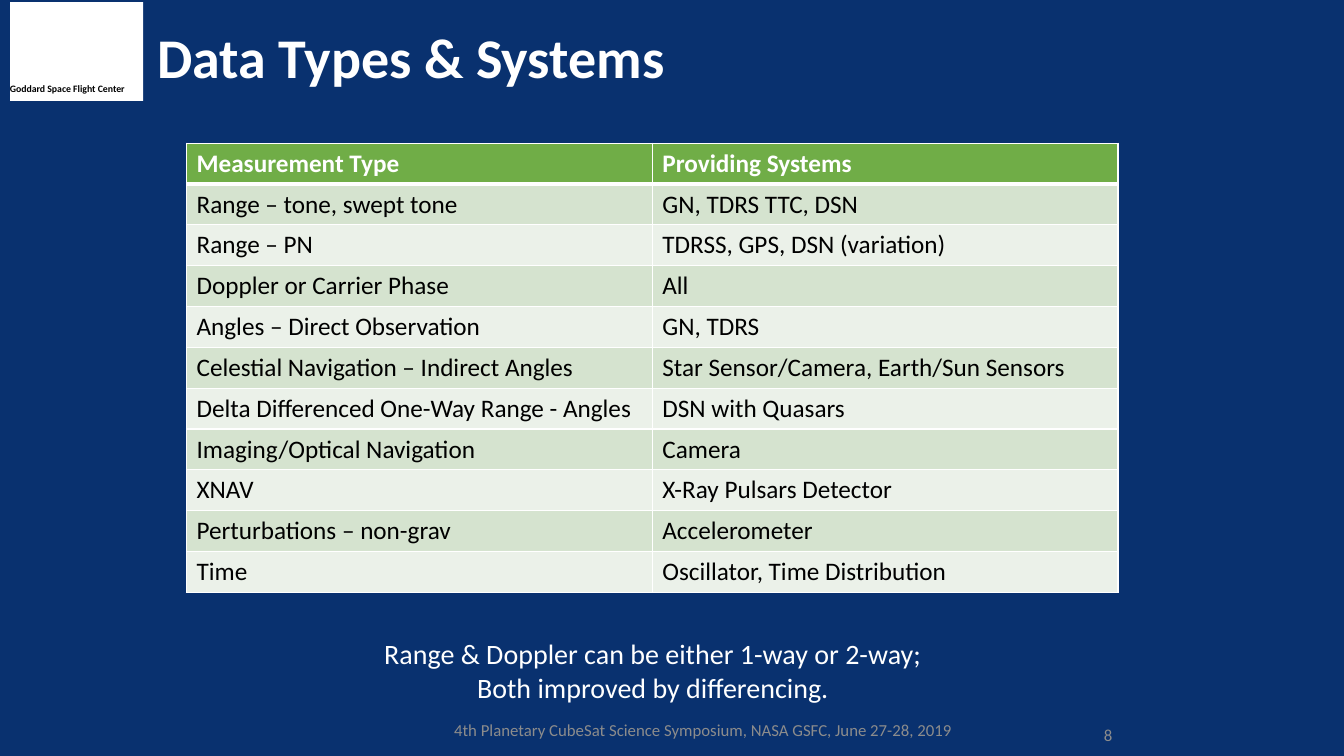
"""Build the Data Types & Systems slide."""
from lxml.etree import SubElement
from pptx import Presentation
from pptx.dml.color import RGBColor
from pptx.enum.shapes import MSO_SHAPE
from pptx.enum.text import MSO_ANCHOR, PP_ALIGN
from pptx.oxml.ns import qn
from pptx.util import Inches, Pt

NAVY = RGBColor(0x09, 0x31, 0x6F)
WHITE = RGBColor(0xFF, 0xFF, 0xFF)
BLACK = RGBColor(0x00, 0x00, 0x00)
GRAY = RGBColor(0x8C, 0x8C, 0x8C)
GREEN = RGBColor(0x70, 0xAD, 0x47)
BANDS = (RGBColor(0xEB, 0xF1, 0xE9), RGBColor(0xD5, 0xE3, 0xCF))
FONT = "Calibri"

CENTER = "Goddard Space Flight Center"
TITLE = "Data Types & Systems"
ROWS = [
    ("Measurement Type", "Providing Systems"),
    ("Range – tone, swept tone", "GN, TDRS TTC, DSN"),
    ("Range – PN", "TDRSS, GPS, DSN (variation)"),
    ("Doppler or Carrier Phase", "All"),
    ("Angles – Direct Observation", "GN, TDRS"),
    ("Celestial Navigation – Indirect Angles", "Star Sensor/Camera, Earth/Sun Sensors"),
    ("Delta Differenced One-Way Range - Angles", "DSN with Quasars"),
    ("Imaging/Optical Navigation", "Camera"),
    ("XNAV", "X-Ray Pulsars Detector"),
    ("Perturbations – non-grav", "Accelerometer"),
    ("Time", "Oscillator, Time Distribution"),
]
SUMMARY = "Range & Doppler can be either 1-way or 2-way;\nBoth improved by differencing."
FOOTER = "4th Planetary CubeSat Science Symposium, NASA GSFC, June 27-28, 2019"
PAGE_NUMBER = "8"


def style_text(frame, size, color, bold=False, align=PP_ALIGN.LEFT):
    for para in frame.paragraphs:
        para.alignment = align
        for span in para.runs:
            span.font.name = FONT
            span.font.size = Pt(size)
            span.font.bold = bold
            span.font.color.rgb = color


def add_text(page, text, place, size, color, bold=False, align=PP_ALIGN.LEFT,
             anchor=MSO_ANCHOR.TOP, wrap=True):
    box = page.shapes.add_textbox(*map(Inches, place))
    frame = box.text_frame
    frame.text = text
    frame.word_wrap = wrap
    frame.vertical_anchor = anchor
    style_text(frame, size, color, bold, align)
    return frame


def set_border(cell, side, width):
    line = SubElement(cell._tc.get_or_add_tcPr(), qn(f"a:ln{side}"), w=str(Pt(width)))
    fill = SubElement(line, qn("a:solidFill"))
    SubElement(fill, qn("a:srgbClr"), val=str(WHITE))


def add_measurements(page):
    table = page.shapes.add_table(len(ROWS), 2, Inches(1.85), Inches(1.42),
                                  Inches(9.24), Inches(4.46)).table
    for row_index, values in enumerate(ROWS):
        header = row_index == 0
        widths = {"L": 1, "R": 1, "T": 3 if row_index == 1 else 1, "B": 3 if header else 1}
        for column_index, value in enumerate(values):
            cell = table.cell(row_index, column_index)
            cell.text_frame.text = value
            style_text(cell.text_frame, 18, WHITE if header else BLACK, header)
            for side, width in widths.items():
                set_border(cell, side, width)
            cell.fill.solid()
            cell.fill.fore_color.rgb = GREEN if header else BANDS[row_index % 2]


def main():
    deck = Presentation()
    deck.slide_width, deck.slide_height = Inches(13.33), Inches(7.5)
    page = deck.slides.add_slide(deck.slide_layouts[6])
    page.background.fill.solid()
    page.background.fill.fore_color.rgb = NAVY

    panel = page.shapes.add_shape(MSO_SHAPE.RECTANGLE, Inches(0.1), Inches(0.02),
                                  Inches(1.32), Inches(0.98))
    panel.shadow.inherit = False
    panel.fill.solid()
    panel.fill.fore_color.rgb = WHITE
    panel.line.fill.background()

    add_text(page, CENTER, (0, 0.77, 1.36, 0.22), 7, BLACK, bold=True, wrap=False)
    title = add_text(page, TITLE, (1.46, 0.25, 8.62, 0.52), 40, WHITE, bold=True)
    title.paragraphs[0].line_spacing = 0.9
    add_measurements(page)
    add_text(page, PAGE_NUMBER, (10.85, 7.13, 0.81, 0.33), 12, GRAY,
             anchor=MSO_ANCHOR.MIDDLE)
    add_text(page, SUMMARY, (3.69, 6.27, 5.57, 0.77), 20, WHITE,
             align=PP_ALIGN.CENTER, wrap=False)
    add_text(page, FOOTER, (4.04, 7.04, 5.87, 0.4), 12, GRAY,
             align=PP_ALIGN.CENTER, anchor=MSO_ANCHOR.MIDDLE)
    deck.save("out.pptx")


if __name__ == "__main__":
    main()
